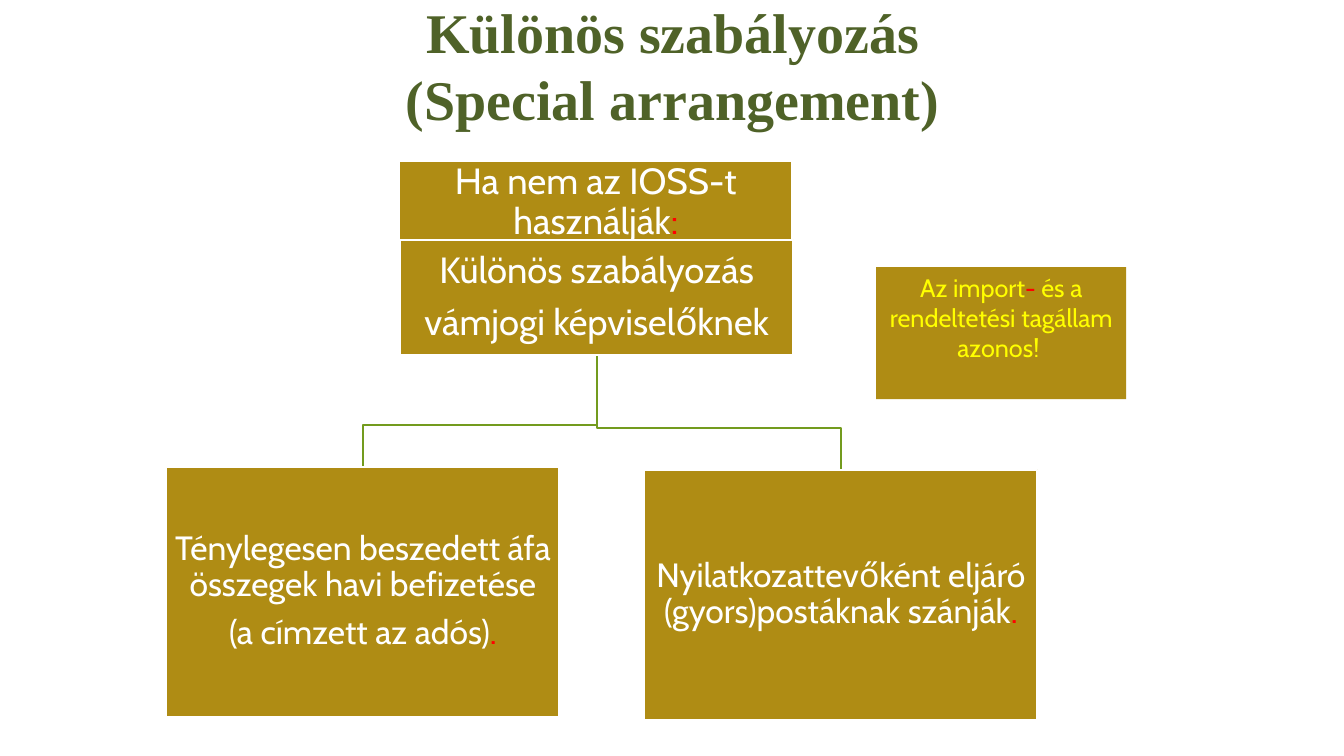
from pptx import Presentation
from pptx.dml.color import RGBColor
from pptx.enum.shapes import MSO_SHAPE as SHAPE
from pptx.enum.text import MSO_ANCHOR as ANCHOR, PP_ALIGN as ALIGN
from pptx.util import Pt

PX = 9144
GOLD = RGBColor(0xAF, 0x8C, 0x14)
GREEN = RGBColor(0x73, 0x9B, 0x1E)
OLIVE = RGBColor(0x4F, 0x62, 0x28)
WHITE = RGBColor(0xFF, 0xFF, 0xFF)
YELLOW = RGBColor(0xFF, 0xFF, 0x00)
RED = RGBColor(0xFF, 0x00, 0x00)


class Deck:
    body_font = "Cabin"
    title_font = "Times New Roman"
    line_width = Pt(1.5)

    def __init__(self, width, height):
        self.prs = Presentation()
        self.prs.slide_width = width * PX
        self.prs.slide_height = height * PX
        self.s = self.prs.slides.add_slide(self.prs.slide_layouts[6])

    def add_text(self, tf, paragraphs, size, color, font, bold=False):
        tf.word_wrap = True
        for i, runs in enumerate(paragraphs):
            p = tf.add_paragraph() if i else tf.paragraphs[0]
            p.alignment = ALIGN.CENTER
            p.font.size = Pt(size)
            p.font.name = font
            p.font.bold = bold
            for text, accent in runs:
                r = p.add_run()
                r.text = text
                r.font.color.rgb = accent or color

    def title(self, x, y, w, h, lines):
        sp = self.s.shapes.add_textbox(x * PX, y * PX, w * PX, h * PX)
        sp.text_frame.vertical_anchor = ANCHOR.MIDDLE
        paragraphs = [[(line, None)] for line in lines]
        self.add_text(sp.text_frame, paragraphs, 40, OLIVE, self.title_font, True)

    def rect(self, x, y, w, h):
        sp = self.s.shapes.add_shape(SHAPE.RECTANGLE, x * PX, y * PX, w * PX, h * PX)
        sp.shadow.inherit = False
        sp.fill.solid()
        sp.fill.fore_color.rgb = GOLD
        return sp

    def node(self, x, y, w, h, size, paragraphs):
        sp = self.rect(x, y, w, h)
        sp.line.color.rgb = WHITE
        sp.line.width = self.line_width
        tf = sp.text_frame
        tf.vertical_anchor = ANCHOR.MIDDLE
        tf.margin_left = tf.margin_right = tf.margin_top = tf.margin_bottom = 2 * PX
        self.add_text(tf, paragraphs, size, WHITE, self.body_font)
        for p in tf.paragraphs:
            p.line_spacing = 0.9
            p.space_after = Pt(round(size * 0.35, 1))

    def note(self, x, y, w, h, paragraphs):
        sp = self.rect(x, y, w, h)
        sp.line.fill.background()
        sp.text_frame.vertical_anchor = ANCHOR.TOP
        self.add_text(sp.text_frame, paragraphs, 18, YELLOW, self.body_font)

    def branch(self, x1, y1, turn, x2, y2):
        outline = self.s.shapes.build_freeform(x1, y1, scale=PX)
        outline.add_line_segments([(x1, turn), (x2, turn), (x2, y2)], close=False)
        sp = outline.convert_to_shape()
        sp.shadow.inherit = False
        sp.fill.background()
        sp.line.color.rgb = GREEN
        sp.line.width = self.line_width


def main():
    deck = Deck(1333, 750)
    deck.branch(592, 352, 425, 834, 466)
    deck.branch(592, 352, 422, 360, 463)
    nodes = [
        (396, 160, 82, 26, [[("Ha nem az IOSS-t használják", None), (":", RED)]]),
        (397, 238, 114, 26, [[("Különös szabályozás", None)],
                             [("vámjogi képviselőknek", None)]]),
        (165, 463, 248, 24, [[("Ténylegesen beszedett áfa összegek havi befizetése", None)],
                             [("(a címzett az adós)", None), (".", RED)]]),
        (639, 466, 248, 24, [[("Nyilatkozattevőként eljáró (gyors)postáknak szánják", None),
                              (".", RED)]]),
    ]
    for x, y, h, size, paragraphs in nodes:
        deck.node(x, y, 390, h, size, paragraphs)
    deck.title(217, 21, 900, 87, ["Különös szabályozás", "(Special arrangement)"])
    deck.note(869, 265, 248, 131, [[("Az import", None), ("-", RED),
                                    (" és a rendeltetési tagállam azonos! ", None)]])
    deck.prs.save("out.pptx")


if __name__ == "__main__":
    main()
